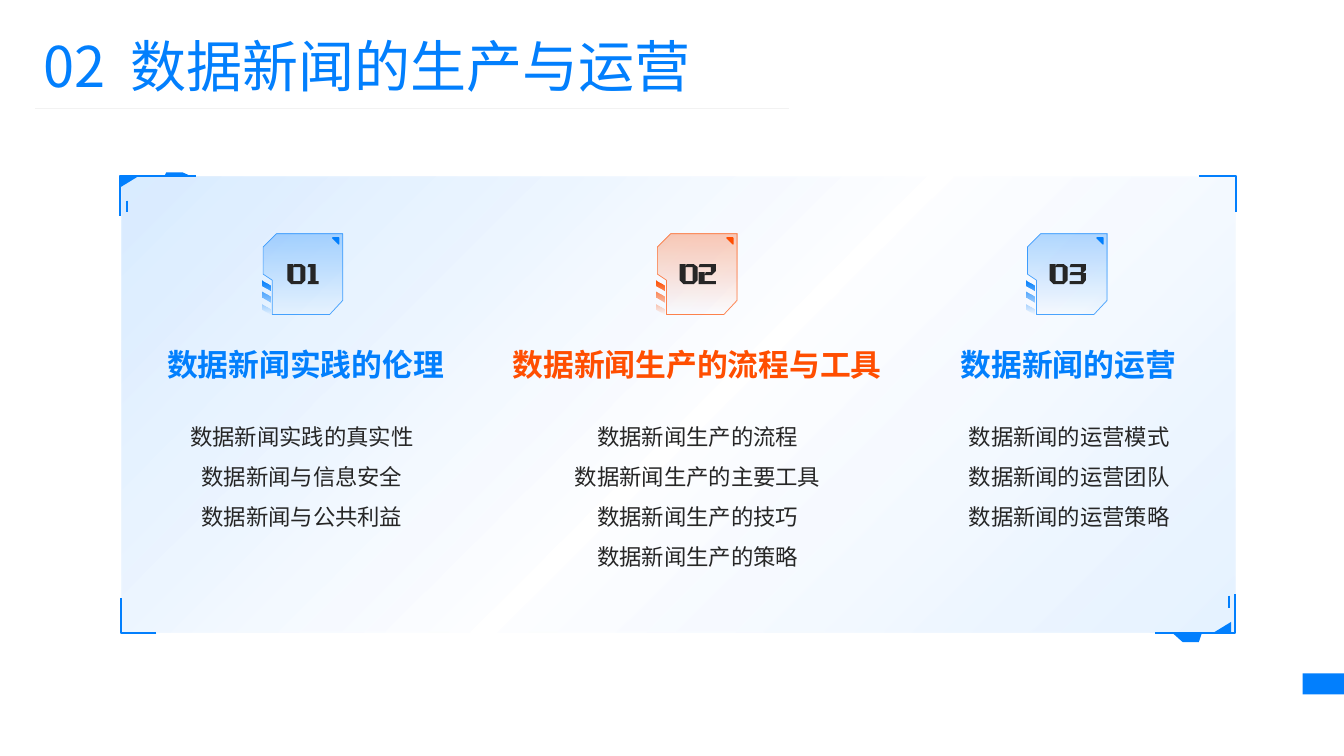
from dataclasses import dataclass

from lxml import etree
from pptx import Presentation
from pptx.dml.color import RGBColor
from pptx.enum.shapes import MSO_CONNECTOR, MSO_SHAPE
from pptx.enum.text import MSO_ANCHOR, PP_ALIGN
from pptx.oxml.ns import qn
from pptx.util import Emu, Pt

RECT, WEDGE = MSO_SHAPE.RECTANGLE, MSO_SHAPE.ISOSCELES_TRIANGLE
LINE = MSO_CONNECTOR.STRAIGHT
TOP, BOTTOM = MSO_ANCHOR.TOP, MSO_ANCHOR.BOTTOM
LEFT, CENTER = PP_ALIGN.LEFT, PP_ALIGN.CENTER

SCALE = 9144  # EMU per px, 100 px to the inch
FONT = "Noto Sans CJK SC"
BLUE, ORANGE, INK, PALE = "027FFD", "FF4E01", "262626", "F2F2F2"

Point = tuple[int, int]
Box = tuple[int, int, int, int]
Stops = list[tuple[int, int]]  # position and opacity, in percent


@dataclass
class Column:
    tint: str
    badge: int  # left edge of the badge
    number: int  # left edge of the digits
    digit: str
    title: str
    head: Point  # left and width of the heading
    body: Point  # left and width of the list
    items: list[str]


COLUMNS = [
    Column(BLUE, 261, 285, "1", "数据新闻实践的伦理", (154, 298), (169, 261),
           ["数据新闻实践的真实性", "数据新闻与信息安全", "数据新闻与公共利益"]),
    Column(ORANGE, 652, 674, "2", "数据新闻生产的流程与工具", (482, 419), (561, 262),
           ["数据新闻生产的流程", "数据新闻生产的主要工具\v数据新闻生产的技巧",
            "数据新闻生产的策略"]),
    Column(BLUE, 1019, 1041, "3", "数据新闻的运营", (882, 355), (879, 363),
           ["数据新闻的运营模式", "数据新闻的运营团队", "数据新闻的运营策略"]),
]

# Digit outlines, measured from the left edge of the leading zero
DIGITS: dict[str, list[list[Point]]] = {
    "0": [[(0, 0), (6, 0), (6, 17), (13, 17), (13, 3), (6, 3), (7, 0), (14, 0),
           (18, 3), (18, 16), (14, 20), (4, 20), (0, 16)]],
    "1": [[(21, 0), (28, 0), (28, 17), (31, 17), (31, 20), (20, 20), (21, 17),
           (23, 17), (23, 3), (20, 3)]],
    "2": [[(19, 8), (25, 8), (25, 17), (36, 17), (36, 20), (19, 20)],
          [(20, 0), (36, 0), (36, 7), (32, 11), (25, 11), (26, 8), (31, 8),
           (31, 3), (19, 3)]],
    "3": [[(21, 0), (36, 0), (36, 6), (33, 9), (36, 9), (36, 16), (33, 20),
           (20, 20), (20, 17), (31, 17), (31, 11), (20, 11), (21, 8), (31, 8),
           (31, 3), (20, 3)]],
}
BADGE = [(13, 0), (79, 0), (79, 66), (66, 80), (9, 80), (9, 46), (0, 40), (0, 13)]
STRIPE = [(-1, 0), (7, 5), (7, 11), (-1, 6)]

# Panel corner parts
CORNERS = [
    [(1189, 175), (1226, 175), (1226, 210)],
    [(1146, 628), (1225, 628), (1225, 589)],
    [(194, 175), (119, 175), (119, 214)],
    [(155, 628), (120, 628), (120, 593)],
]
TABS = [
    [(1173, 637), (1164, 629), (1192, 628), (1189, 637)],
    [(181, 171), (190, 175), (163, 175), (165, 171)],
]
TICKS = [((126, 199), (126, 210)), ((1219, 591), (1219, 603))]
WEDGES = [((1203, 617, 18, 11), 0), ((119, 175, 18, 11), 180)]

deck = Presentation()
deck.slide_width, deck.slide_height = Emu(1333 * SCALE), Emu(750 * SCALE)
slide = deck.slides.add_slide(deck.slide_layouts[6])
shapes = slide.shapes


def rgb(tint: str) -> RGBColor:
    return RGBColor.from_string(tint)


def emu(nums) -> list[Emu]:
    return [Emu(n * SCALE) for n in nums]


def move(points: list[Point], x: int, y: int) -> list[Point]:
    return [(a + x, b + y) for a, b in points]


def fade(color, percent: int) -> None:
    etree.SubElement(color, qn("a:alpha"), val=str(percent * 1000))


def paint(shape, tint: str) -> None:
    shape.fill.solid()
    shape.fill.fore_color.rgb = rgb(tint)


def blend(shape, tint: str, stops: Stops, angle: int) -> None:
    shape.fill.gradient()
    shape.fill.gradient_angle = angle
    group = shape._element.spPr.find(qn("a:gradFill")).find(qn("a:gsLst"))
    for old in list(group):
        group.remove(old)
    for place, alpha in stops:
        stop = etree.SubElement(group, qn("a:gs"), pos=str(place * 1000))
        fade(etree.SubElement(stop, qn("a:srgbClr"), val=tint), alpha)


def stroke(shape, tint: str, width: float) -> None:
    shape.line.color.rgb = rgb(tint)
    shape.line.width = Pt(width)


def add_box(kind, box: Box):
    shape = shapes.add_shape(kind, *emu(box))
    shape.shadow.inherit = False
    shape.line.fill.background()
    return shape


def add_wedge(box: Box, turn: int, tint: str):
    shape = add_box(WEDGE, box)
    shape.adjustments[0] = 1
    shape.rotation = turn
    paint(shape, tint)
    return shape


def add_free(parts: list[list[Point]], close: bool = True):
    form = shapes.build_freeform(*parts[0][0], scale=SCALE)
    for n, part in enumerate(parts):
        if n:
            form.move_to(*part[0])
        form.add_line_segments(part[1:], close=close)
    shape = form.convert_to_shape()
    shape.shadow.inherit = False
    shape.line.fill.background()
    return shape


def add_line(start: Point, end: Point, tint: str, width: float) -> None:
    line = shapes.add_connector(LINE, *emu(start + end))
    stroke(line, tint, width)
    etree.SubElement(line._element.spPr, qn("a:effectLst"))


def add_text(box: Box, lines: list[list[str]], size: int, tint: str, bold: bool = False,
             align=CENTER, anchor=TOP, gap: float = 1, inset: Point = (0, 0)):
    frame = shapes.add_textbox(*emu(box)).text_frame
    frame.word_wrap = True
    frame.vertical_anchor = anchor
    frame.margin_left, frame.margin_top = emu(inset)
    frame.margin_right, frame.margin_bottom = emu(inset)
    for n, parts in enumerate(lines):
        para = frame.add_paragraph() if n else frame.paragraphs[0]
        para.text = parts[0]
        for part in parts[1:]:
            para.add_run().text = part
        para.alignment, para.line_spacing = align, gap
        for run in para.runs:
            run.font.size, run.font.bold = Pt(size), bold
            run.font.color.rgb = rgb(tint)
            run.font.name = FONT
            etree.SubElement(run.font._element, qn("a:ea"), typeface=FONT)
    return frame


def add_column(col: Column) -> None:
    # Number badge
    badge = add_free([move(BADGE, col.badge, 232)])
    blend(badge, col.tint, [(0, 0), (100, 30)], 90)
    stroke(badge, col.tint, 0.5)
    fade(badge.line._ln.find(".//" + qn("a:srgbClr")), 70)
    stroke(add_wedge((col.badge + 69, 236, 6, 6), 270, col.tint), col.tint, 1)
    stripes = add_free([move(STRIPE, col.badge, 278 + n * 23 // 2) for n in range(3)])
    blend(stripes, col.tint, [(0, 0), (100, 100)], 90)
    parts = DIGITS["0"] + DIGITS[col.digit]
    paint(add_free([move(part, col.number, 262) for part in parts]), INK)
    # Heading and list
    left, width = col.body
    add_text((left, 406, width, 179), [[item] for item in col.items], 16, INK, gap=1.5)
    left, width = col.head
    add_text((left, 343, width, 37), [[col.title]], 22, col.tint, True, anchor=BOTTOM)


# Page mark and slide title
paint(add_box(RECT, (1292, 668, 42, 21)), BLUE)
title = add_text((33, 26, 768, 77), [["02", " ", "数据新闻的生产与运营"]], 40, BLUE,
                 align=LEFT, inset=(10, 5))
title.paragraphs[0].runs[1].font._element.set("spc", "900")  # wide gap after the number
add_line((35, 108), (783, 108), PALE, 0.5)

# Panel with its corners
blend(add_box(RECT, (121, 175, 1104, 453)), BLUE, [(0, 15), (52, 0), (100, 10)], 315)
for corner in CORNERS:
    bracket = add_free([corner], close=False)
    bracket.fill.background()
    stroke(bracket, BLUE, 1.5)
for tab in TABS:
    paint(add_free([tab]), BLUE)
for box, turn in WEDGES:
    add_wedge(box, turn, BLUE)
for start, end in TICKS:
    add_line(start, end, BLUE, 1)

for column in COLUMNS:
    add_column(column)

deck.save("out.pptx")
